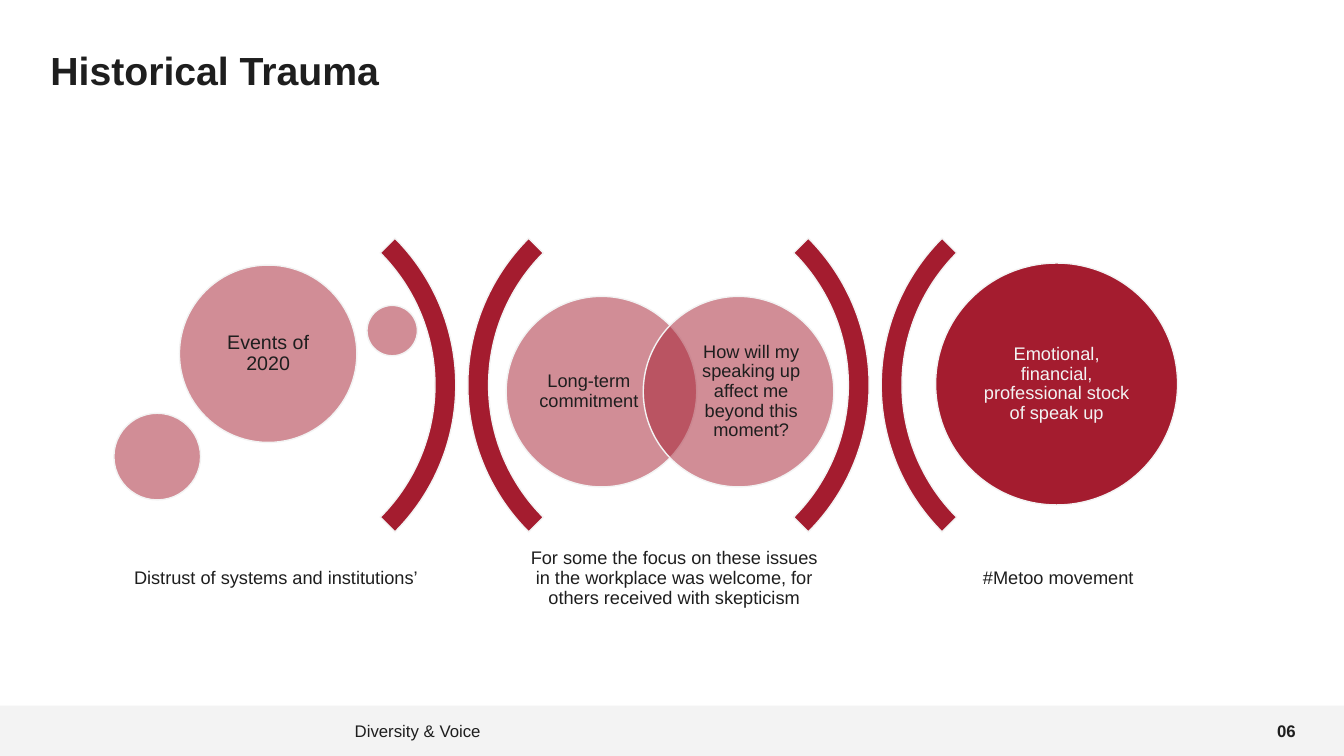
import lxml.etree
import pptx
import pptx.dml.color
import pptx.enum.shapes
import pptx.enum.text
import pptx.oxml.ns
import pptx.util

Inches = pptx.util.Inches
Pt = pptx.util.Pt
Shape = pptx.enum.shapes.MSO_SHAPE
Align = pptx.enum.text.PP_ALIGN
CRIMSON, INK, PALE = "A41C2F", "1E1E1E", "F3F3F3"
PANEL_TOP, PANEL_PITCH = 1.76, 4.1


def set_color(color_format, value):
    """Apply a hex colour to a colour format."""
    color_format.rgb = pptx.dml.color.RGBColor.from_string(value)


def write(shape, text, size, color=INK, bold=False, align=Align.CENTER,
          insets=(0.05, 0.05, 0.05, 0.05), spacing=None):
    """Write one vertically centred paragraph in a shape."""
    frame = shape.text_frame
    frame.word_wrap = True
    frame.auto_size = pptx.enum.text.MSO_AUTO_SIZE.NONE
    frame.vertical_anchor = pptx.enum.text.MSO_ANCHOR.MIDDLE
    frame.margin_left, frame.margin_top, frame.margin_right, frame.margin_bottom = map(Inches, insets)
    frame.text = text
    paragraph = frame.paragraphs[0]
    paragraph.alignment = align
    paragraph.line_spacing = spacing
    paragraph.font.name = "Arial"
    paragraph.font.size = Pt(size)
    paragraph.font.bold = bold
    set_color(paragraph.font.color, color)


def add_solid(slide, kind, box, fill, outline=None, alpha=None):
    """Add a filled shape with an optional outline and opacity percentage."""
    shape = slide.shapes.add_shape(kind, *map(Inches, box))
    shape.shadow.inherit = False
    shape.fill.solid()
    set_color(shape.fill.fore_color, fill)
    if alpha:
        fill_color = shape.fill._xPr.find(".//" + pptx.oxml.ns.qn("a:srgbClr"))
        lxml.etree.SubElement(fill_color, pptx.oxml.ns.qn("a:alpha"), val=str(alpha * 1000))
    if outline:
        set_color(shape.line.color, outline)
        shape.line.width = Pt(1)
    else:
        shape.line.fill.background()
    return shape


def add_label(slide, box, text, size, **style):
    """Add a text box with one paragraph."""
    write(slide.shapes.add_textbox(*map(Inches, box)), text, size, **style)


def add_bracket(slide, left, rotation):
    """Add a curved bracket in the square that starts at left."""
    bracket = add_solid(slide, Shape.BLOCK_ARC, (left, PANEL_TOP, 4.12, 4.12), CRIMSON, PALE)
    bracket.rotation = rotation
    for index, value in enumerate((135, 189, 0.05)):
        bracket.adjustments[index] = value


def add_circle(slide, left, top, size, text="", font_size=13, color=INK, alpha=50,
               insets=(0.05, 0.05, 0.05, 0.05)):
    """Add a crimson circle, with text if given."""
    circle = add_solid(slide, Shape.OVAL, (left, top, size, size), CRIMSON, PALE, alpha)
    if text:
        write(circle, text, font_size, color, insets=insets, spacing=0.9)


def add_caption(slide, left, text):
    """Add the caption below a panel."""
    add_label(slide, (left, PANEL_TOP + 3.57, 3.13, 0.82), text, 13, spacing=0.9)


def add_distrust(slide, left, top):
    """Add the panel of loose circles."""
    add_circle(slide, left + 1.24, top + 0.87, 1.76, "Events of 2020", 14)
    add_circle(slide, left + 0.59, top + 2.34, 0.86)
    add_circle(slide, left + 3.1, top + 1.27, 0.5)
    add_caption(slide, left + 0.63, "Distrust of systems and institutions’")


def add_workplace(slide, left, top):
    """Add the panel of two overlapping circles."""
    add_circle(slide, left + 0.38, top + 1.18, 1.89, "Long-term commitment",
               insets=(0, 0, 0.25, 0))
    add_circle(slide, left + 1.74, top + 1.18, 1.89,
               "How will my speaking up affect me beyond this moment?",
               insets=(0.25, 0, 0, 0))
    add_caption(slide, left + 0.48, "For some the focus on these issues in the workplace "
                "was welcome, for others received with skepticism")


def add_movement(slide, left, top):
    """Add the panel of one solid circle."""
    add_circle(slide, left + 0.54, top + 0.85, 2.4,
               "Emotional, financial, professional stock of speak up", color=PALE, alpha=None)
    add_caption(slide, left + 0.19, "#Metoo movement")


def add_footer(slide, top):
    """Add the band with the section name and page number."""
    add_solid(slide, Shape.RECTANGLE, (0, top, 13.33, 0.5), PALE)
    margins = (0.1, 0.05, 0.1, 0.05)
    add_label(slide, (3.42, top + 0.05, 8.8, 0.4), "Diversity & Voice", 12,
              align=Align.LEFT, insets=margins)
    add_label(slide, (12.22, top + 0.05, 0.73, 0.4), "06", 12, bold=True,
              align=Align.RIGHT, insets=margins)


def add_title(slide, box):
    """Place and format the title placeholder."""
    title = slide.shapes.title
    title.left, title.top, title.width, title.height = map(Inches, box)
    write(title, "Historical Trauma", 28, bold=True, align=Align.LEFT,
          insets=(0.1, 0.05, 0.1, 0.05), spacing=Pt(45))


def main():
    """Build and save the slide."""
    deck = pptx.Presentation()
    deck.slide_width, deck.slide_height = Inches(13.33), Inches(7.5)
    slide = deck.slides.add_slide(deck.slide_layouts[5])
    add_title(slide, (0.4, 0.28, 12.46, 0.66))
    add_footer(slide, 7)
    for number, add_panel in enumerate((add_distrust, add_workplace, add_movement)):
        left = 0.54 + number * PANEL_PITCH
        if number > 0:
            add_bracket(slide, left, 270)
        if number < 2:
            add_bracket(slide, left - 0.14, 90)
        add_panel(slide, left, PANEL_TOP)
    deck.save("out.pptx")


if __name__ == "__main__":
    main()
